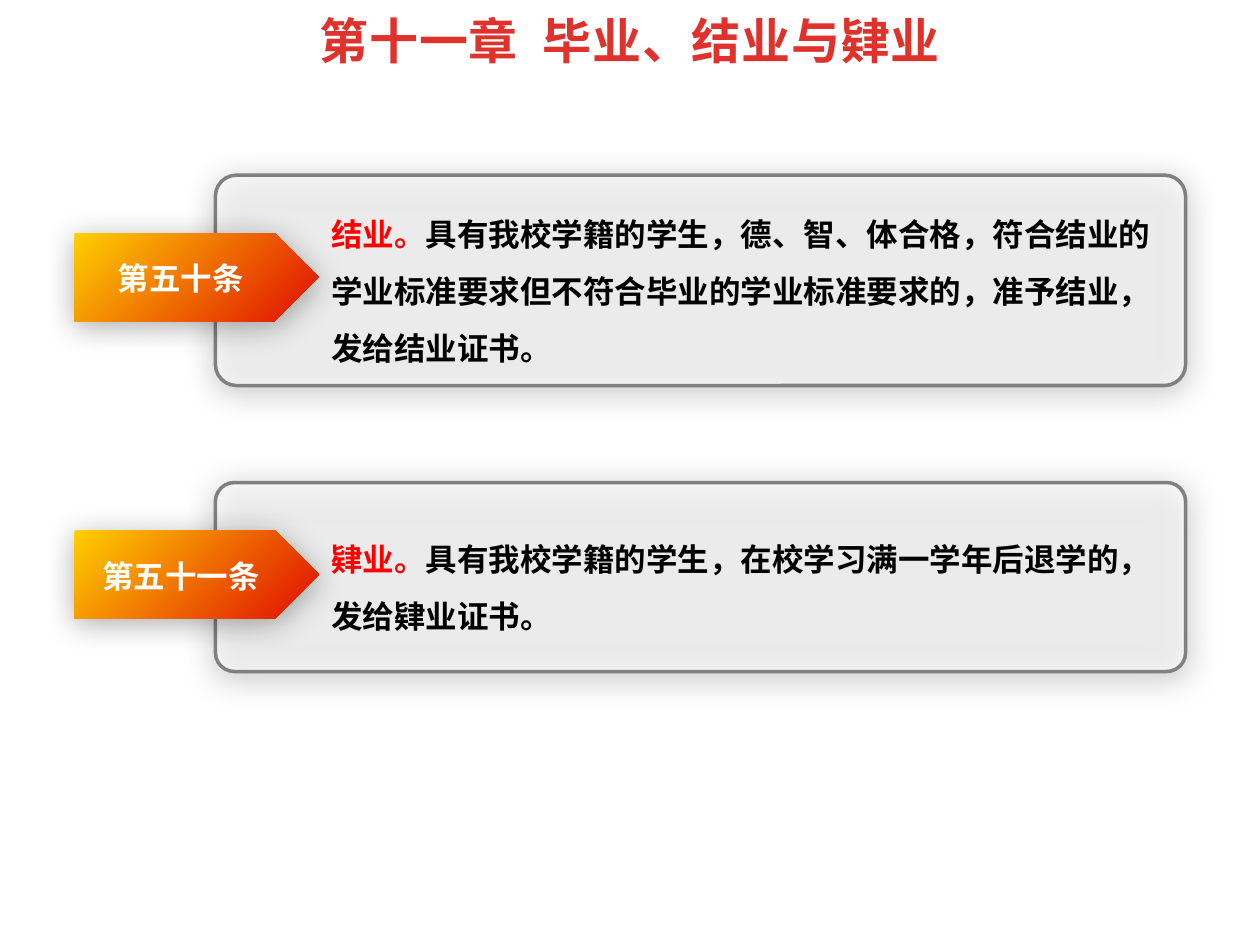
from lxml import etree
from pptx import Presentation
from pptx.dml.color import RGBColor
from pptx.enum.shapes import MSO_SHAPE
from pptx.enum.text import MSO_ANCHOR, PP_ALIGN
from pptx.oxml.ns import qn
from pptx.util import Inches, Pt

ROUNDED, PENTAGON = MSO_SHAPE.ROUNDED_RECTANGLE, MSO_SHAPE.PENTAGON
CENTER, LEFT, TOP = PP_ALIGN.CENTER, PP_ALIGN.LEFT, MSO_ANCHOR.TOP
FONT = "Noto Sans CJK SC"
RED, BLACK, WHITE, GREY, TITLE_RED = "FF0000", "000000", "FFFFFF", "808080", "E0322D"
ARROW_STOPS = [(0, "FFCF01"), (0.9, "E22000")]

TITLE = "第十一章  毕业、结业与肄业"
# Tops and heights are in inches.
ARTICLES = [
    {"label": "第五十条", "term": "结业。",
     "text": "具有我校学籍的学生，德、智、体合格，符合结业的学业标准要求但不符合毕业的"
             "学业标准要求的，准予结业，发给结业证书。",
     "panel": (1.39, 1.67), "body": (1.51, 1.72), "arrow_top": 1.85},
    {"label": "第五十一条", "term": "肄业。",
     "text": "具有我校学籍的学生，在校学习满一学年后退学的，发给肄业证书。",
     "panel": (3.83, 1.5), "body": (4.09, 0.83), "arrow_top": 4.21},
]


def rgb(value):
    return RGBColor.from_string(value)


def add_xml(parent, tag, **attributes):
    return etree.SubElement(parent, qn(tag), attributes)


def add_shadow(shape):
    shape.shadow.inherit = False
    effects = shape._element.spPr.find(qn("a:effectLst"))
    outer = add_xml(effects, "a:outerShdw", blurRad=str(Pt(17.8)), dist=str(Pt(3)),
                    dir=str(87 * 60000), algn="ctr", rotWithShape="0")
    add_xml(add_xml(outer, "a:srgbClr", val=BLACK), "a:alpha", val="33000")


def write(box, spans, size=18, align=LEFT, line_spacing=1.0):
    """Fill the box with one paragraph of (text, colour) spans."""
    frame = box.text_frame
    frame.word_wrap = True
    frame.vertical_anchor = TOP
    para = frame.paragraphs[0]
    para.alignment = align
    para.line_spacing = line_spacing
    for text, color in spans:
        span = para.add_run()
        span.text = text
        for name, value in {"name": FONT, "size": Pt(size), "bold": True}.items():
            setattr(span.font, name, value)
        span.font.color.rgb = rgb(color)
        add_xml(span.font._element, "a:ea", typeface=FONT)


def add_text(page, place, spans, **style):
    write(page.shapes.add_textbox(*map(Inches, place)), spans, **style)


def add_panel(page, top, height):
    panel = page.shapes.add_shape(ROUNDED, *map(Inches, (1.71, top, 7.7, height)))
    panel.adjustments[0] = 0.1
    panel.fill.solid()
    panel.fill.fore_color.rgb = rgb(WHITE)
    color = panel._element.spPr.find(qn("a:solidFill")).find(qn("a:srgbClr"))
    add_xml(color, "a:alpha", val="60000")
    panel.line.color.rgb = rgb(GREY)
    panel.line.width = Pt(2)
    add_shadow(panel)


def add_arrow(page, top, label):
    arrow = page.shapes.add_shape(PENTAGON, *map(Inches, (0.59, top, 1.94, 0.7)))
    arrow.fill.gradient()
    arrow.fill.gradient_angle = 315
    for stop, (position, color) in zip(arrow.fill.gradient_stops, ARROW_STOPS):
        stop.position = position
        stop.color.rgb = rgb(color)
    arrow.line.fill.background()
    add_shadow(arrow)
    add_text(page, (0.68, top + 0.16, 1.51, 0.4), [(label, WHITE)], align=CENTER)


def add_title(page):
    title = page.shapes.title
    title.left, title.top, title.width, title.height = map(Inches, (0, 0.03, 10, 0.57))
    write(title, [(TITLE, TITLE_RED)], size=28, align=CENTER)
    title.text_frame.paragraphs[0].runs[0].font._element.set("spc", "50")


def main():
    deck = Presentation()
    deck.slide_width, deck.slide_height = Inches(10), Inches(7.5)
    page = deck.slides.add_slide(deck.slide_layouts[5])
    add_title(page)
    for article in ARTICLES:
        add_panel(page, *article["panel"])
        top, height = article["body"]
        add_text(page, (2.53, top, 6.72, height),
                 [(article["term"], RED), (article["text"], BLACK)], line_spacing=1.5)
        add_arrow(page, article["arrow_top"], article["label"])
    deck.save("out.pptx")


if __name__ == "__main__":
    main()
